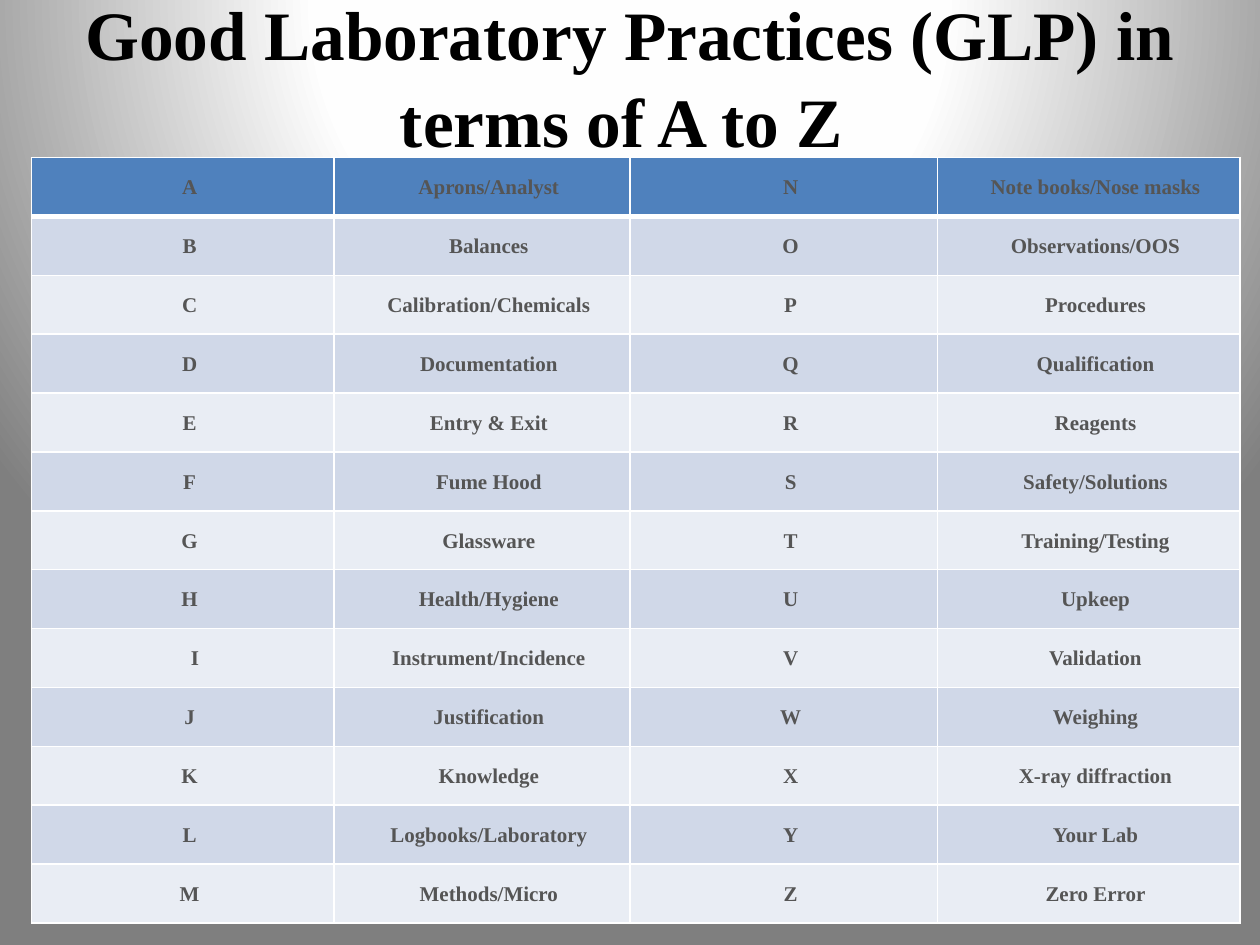
from pptx import Presentation
from pptx.dml.color import RGBColor
from pptx.enum.text import MSO_ANCHOR as Anchor, PP_ALIGN as Align
from pptx.oxml import parse_xml
from pptx.oxml.ns import nsdecls
from pptx.util import Inches, Pt

FONT = "Times New Roman"
COLORS = {
    "title": "000000", "text": "555555", "border": "FFFFFF",
    "header": "4F81BD", "odd": "D0D8E8", "even": "E9EDF4",
}
BACKGROUND_STOPS = [(0, "FFFFFF"), (40, "FEFEFE"), (100, "7F7F7F")]
TITLE = "Good Laboratory Practices (GLP) in terms of A to Z "
COLUMN_WIDTHS = [2.4, 2.35, 2.44, 2.4]
TABLE_HEIGHT = 6.08
ROWS = [
    ("A", "Aprons/Analyst", "N", "Note books/Nose masks"),
    ("B", "Balances", "O", "Observations/OOS"),
    ("C", "Calibration/Chemicals", "P", "Procedures"),
    ("D", "Documentation", "Q", "Qualification"),
    ("E", "Entry & Exit", "R", "Reagents"),
    ("F", "Fume Hood", "S", "Safety/Solutions"),
    ("G", "Glassware", "T", "Training/Testing"),
    ("H", "Health/Hygiene", "U", "Upkeep"),
    ("  I", "Instrument/Incidence", "V", "Validation"),
    ("J", "Justification", "W", "Weighing"),
    ("K", "Knowledge", "X", "X-ray diffraction"),
    ("L", "Logbooks/Laboratory", "Y", "Your Lab"),
    ("M", "Methods/Micro", "Z", "Zero Error"),
]


def write_text(frame, text, *, size, color, line_spacing, space_after=0):
    frame.word_wrap = True
    paragraph = frame.paragraphs[0]
    paragraph.alignment = Align.CENTER
    paragraph.line_spacing = line_spacing
    paragraph.space_after = Pt(space_after)
    run = paragraph.add_run()
    run.text = text
    run.font.name = FONT
    run.font.size = Pt(size)
    run.font.bold = True
    run.font.color.rgb = RGBColor.from_string(COLORS[color])


def set_background(slide):
    """Give the slide a circular gradient centred above its top edge."""
    stops = "".join(
        f'<a:gs pos="{position * 1000}"><a:srgbClr val="{color}"/></a:gs>'
        for position, color in BACKGROUND_STOPS
    )
    background = parse_xml(
        f'<p:bg {nsdecls("p", "a")}><p:bgPr><a:gradFill rotWithShape="1">'
        f'<a:gsLst>{stops}</a:gsLst><a:path path="circle">'
        '<a:fillToRect l="50000" t="-80000" r="50000" b="180000"/></a:path>'
        '</a:gradFill><a:effectLst/></p:bgPr></p:bg>'
    )
    slide.element.cSld.insert(0, background)


def add_title(slide):
    box = slide.shapes.add_textbox(Inches(0.5), Inches(0.3), Inches(9), Inches(1.25))
    frame = box.text_frame
    frame.vertical_anchor = Anchor.BOTTOM
    frame.margin_bottom = Inches(0.27)
    write_text(frame, TITLE, size=39.6, color="title", line_spacing=1.05)


def set_borders(cell, **widths):
    """Draw the borders L, R, T and B with the given widths in points."""
    properties = cell._tc.get_or_add_tcPr()
    for side, width in widths.items():
        properties.append(parse_xml(
            f'<a:ln{side} {nsdecls("a")} w="{Pt(width)}"><a:solidFill>'
            f'<a:srgbClr val="{COLORS["border"]}"/></a:solidFill></a:ln{side}>'
        ))


def format_cell(cell, text, row_index):
    set_borders(cell, L=1, R=1, T=3 if row_index == 1 else 1, B=3 if row_index == 0 else 1)
    fill = "header" if row_index == 0 else "odd" if row_index % 2 else "even"
    cell.fill.solid()
    cell.fill.fore_color.rgb = RGBColor.from_string(COLORS[fill])
    cell.vertical_anchor = Anchor.MIDDLE
    cell.margin_left = Inches(0.21)
    cell.margin_right = cell.margin_top = cell.margin_bottom = Inches(0.1)
    write_text(cell.text_frame, text, size=12, color="text", line_spacing=1.07, space_after=12)


def add_practices_table(slide):
    table = slide.shapes.add_table(
        len(ROWS), len(COLUMN_WIDTHS), Inches(0.25), Inches(1.25),
        Inches(sum(COLUMN_WIDTHS)), Inches(TABLE_HEIGHT),
    ).table
    table.horz_banding = False
    for column, width in zip(table.columns, COLUMN_WIDTHS):
        column.width = Inches(width)
    for row_index, texts in enumerate(ROWS):
        for column_index, text in enumerate(texts):
            format_cell(table.cell(row_index, column_index), text, row_index)


def main():
    presentation = Presentation()
    presentation.slide_width = Inches(10)
    presentation.slide_height = Inches(7.5)
    slide = presentation.slides.add_slide(presentation.slide_layouts[6])
    set_background(slide)
    add_title(slide)
    add_practices_table(slide)
    presentation.save("out.pptx")


if __name__ == "__main__":
    main()
